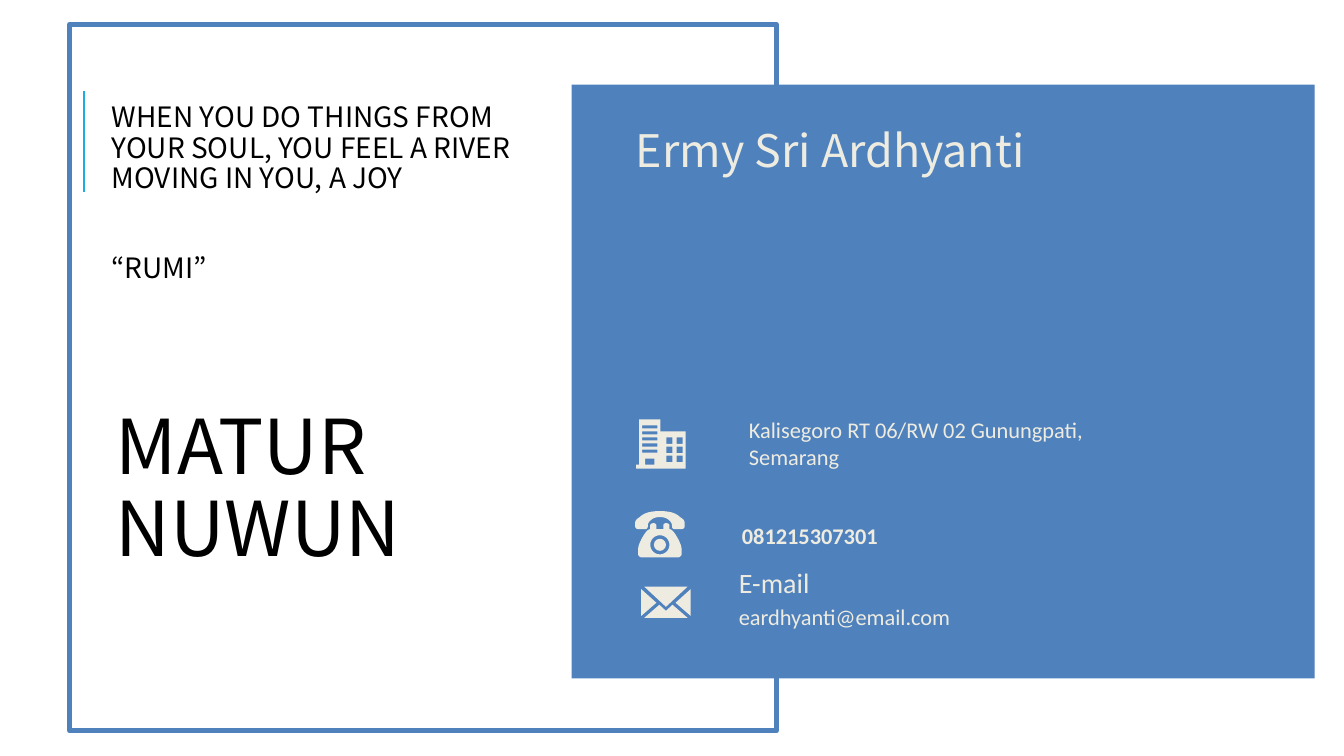
from dataclasses import dataclass

from pptx import Presentation, util as u
from pptx.dml.color import RGBColor
from pptx.enum import shapes, text
from pptx.oxml import ns, xmlchemy

COLORS = {"blue": "4F81BD", "cyan": "1CACE3", "cream": "EEECE1", "black": "000000"}
HEADING_FONT = "Noto Sans CJK KR"
BODY_FONT = "Calibri"
CELL = u.Inches(0.1)
FINE = u.Inches(0.01)


@dataclass
class Box:
    """A rectangle measured in grid cells."""
    left: float
    top: float
    width: float
    height: float

    def inner(self, left, top, width, height):
        """Return a box whose corner is offset from this one."""
        return Box(self.left + left, self.top + top, width, height)

    def emu(self):
        """Return left, top, width and height as slide lengths."""
        return [round(n * CELL) for n in (self.left, self.top, self.width, self.height)]


def color(name):
    """Look up a named colour."""
    return RGBColor.from_string(COLORS[name])


def paint(shape, fill):
    """Give a shape a plain fill without line or shadow."""
    shape.shadow.inherit = False
    shape.fill.solid()
    shape.fill.fore_color.rgb = color(fill)
    shape.line.fill.background()


def write(slide, box, *lines, size=16, font=BODY_FONT, ink="cream", bold=False,
          spacing=None, gap=0):
    """Add a text box with one paragraph per line, separated by gap points."""
    frame = slide.shapes.add_textbox(*box.emu()).text_frame
    frame.word_wrap = True
    frame.vertical_anchor = text.MSO_ANCHOR.TOP
    for index, line in enumerate(lines):
        paragraph = frame.add_paragraph() if index else frame.paragraphs[0]
        paragraph.line_spacing = spacing
        paragraph.space_before = u.Pt(gap if index else 0)
        run = paragraph.add_run()
        run.text = line
        run.font.size = u.Pt(size)
        run.font.name = font
        run.font.bold = bold
        run.font.color.rgb = color(ink)


def outline(slide, box, *contours):
    """Fill contours given in tenths of a cell from the box corner."""
    left, top, _, _ = box.emu()
    placed = [[(round(left + x * FINE), round(top + y * FINE)) for x, y in contour]
              for contour in contours]
    builder = slide.shapes.build_freeform(*placed[0][0], scale=1.0)
    for index, points in enumerate(placed):
        if index:
            builder.move_to(*points[0])
        builder.add_line_segments(points[1:], close=True)
    paint(builder.convert_to_shape(), "cream")


def curve(start, first, second, end, steps=8):
    """Sample a cubic curve."""
    points = []
    for step in range(steps + 1):
        t = step / steps
        weights = ((1 - t) ** 3, 3 * t * (1 - t) ** 2, 3 * t * t * (1 - t), t ** 3)
        points.append(tuple(sum(w * p[axis] for w, p in zip(weights, (start, first, second, end)))
                            for axis in (0, 1)))
    return points


def mirror(half, center):
    """Complete a symmetric contour from its right half."""
    return ([(center + x, y) for x, y in half]
            + [(center - x, y) for x, y in reversed(half)])


def rectangle(left, top, width, height):
    """Return the corners of a rectangle."""
    return [(left, top), (left, top + height),
            (left + width, top + height), (left + width, top)]


def building_icon(slide, box):
    """Draw an office tower with its annex."""
    walls = [(24, 12), (24, 0), (3, 0), (3, 45), (0, 45), (0, 49), (49, 49), (49, 12)]
    door = rectangle(9, 39, 9, 6)
    slats = [rectangle(6, 6 + 6 * row, 15, 3) for row in range(5)]
    windows = [rectangle(30 + 10 * column, 18 + 9 * row, 6, 6.5)
               for column in range(2) for row in range(3)]
    outline(slide, box, walls, door, *slats, *windows)


def phone_icon(slide, box):
    """Draw a desk telephone with a round dial."""
    center, dial_y = 24.5, 33.5
    handset = (curve((0, 0), (12, 0), (17, 3), (20, 6))
               + curve((20, 6), (23, 8), (24.5, 9), (24.5, 12))
               + curve((24.5, 15), (24.5, 17), (23, 18), (21, 18))
               + curve((15, 18), (13, 18), (12, 17), (12, 15))
               + curve((12, 15), (12, 14), (12, 12), (10, 10))
               + curve((10, 10), (8, 8), (6, 6), (0, 6)))
    body = ([(0, 18), (3.5, 18)]
            + curve((3.5, 14), (3.5, 13), (5, 12), (6, 12))
            + curve((6, 12), (8, 12), (9.5, 13), (9.5, 14))
            + curve((9.5, 18), (11, 18), (12, 19), (13, 20))
            + curve((13, 20), (16, 23), (21.5, 33), (21.5, 37))
            + curve((21.5, 43), (21.5, 44), (20, 46), (18, 46))
            + [(0, 46)])
    ring = (curve((0, 24), (5.25, 24), (9.5, 28.25), (9.5, dial_y))
            + curve((9.5, dial_y), (9.5, 38.75), (5.25, 43), (0, 43)))
    outline(slide, box, mirror(handset, center))
    dial = slide.shapes.add_shape(shapes.MSO_SHAPE.OVAL, *box.inner(1.85, 2.75, 1.2, 1.2).emu())
    paint(dial, "cream")
    outline(slide, box, mirror(body, center), mirror(ring, center))


def envelope_icon(slide, box):
    """Draw an envelope as four separate folds."""
    side = [(0, 2.5), (0, 29), (15, 16)]
    folds = ([(3, 0), (46, 0), (24.5, 20)],
             [(49 - x, y) for x, y in side],
             side,
             [(24.5, 24), (18, 18), (3, 31), (46, 31), (31, 18)])
    for fold in folds:
        outline(slide, box, fold)


def frame_region(slide, box):
    """Draw the square outline and the accent rule inside it."""
    rule_left, rule_top, _, rule_height = box.inner(1.4, 6.6, 0, 10).emu()
    rule = slide.shapes.add_connector(shapes.MSO_CONNECTOR.STRAIGHT, rule_left, rule_top,
                                      rule_left, rule_top + rule_height)
    rule.line.color.rgb = color("cyan")
    rule.line.width = u.Pt(1.5)
    rule._element.spPr.append(xmlchemy.OxmlElement("a:effectLst"))
    square = slide.shapes.add_shape(shapes.MSO_SHAPE.RECTANGLE, *box.emu())
    square.shadow.inherit = False
    square.fill.background()
    square.line.color.rgb = color("blue")
    square.line.width = u.Pt(3.5)
    square._element.spPr.find(ns.qn("a:ln")).append(xmlchemy.OxmlElement("a:round"))


def contact_card(slide, box):
    """Fill the blue card with a name and contact rows."""
    card = slide.shapes.add_shape(shapes.MSO_SHAPE.RECTANGLE, *box.emu())
    paint(card, "blue")
    write(slide, box.inner(5.4, 3.9, 66, 26.9), "Ermy Sri Ardhyanti",
          size=32, font=HEADING_FONT, spacing=0.9)
    write(slide, box.inner(16.6, 32.4, 38.5, 6.4), "Kalisegoro RT 06/RW 02 Gunungpati, Semarang")
    write(slide, box.inner(15.9, 42.9, 38.5, 3.7), "081215307301", bold=True)
    write(slide, box.inner(15.6, 50.9, 38.5, 3.7), "eardhyanti@email.com")
    write(slide, box.inner(15.6, 47.2, 37.2, 4.4), "E-mail", size=20)
    phone_icon(slide, box.inner(6.3, 42.3, 4.9, 4.6))
    envelope_icon(slide, box.inner(6.9, 49.8, 4.9, 3.1))
    building_icon(slide, box.inner(6.4, 33.2, 4.9, 4.9))


def closing_words(slide, box):
    """Place the quotation and the thanks."""
    style = {"font": HEADING_FONT, "ink": "black", "spacing": 0.9}
    write(slide, box.inner(3.2, 7.4, 43.4, 26.9),
          "WHEN YOU DO THINGS FROM YOUR SOUL, YOU FEEL A RIVER MOVING IN YOU, A JOY",
          "“RUMI”", size=20, gap=43, **style)
    write(slide, box.inner(3.6, 37.7, 43.4, 26.9), "MATUR NUWUN", size=54, **style)


def main():
    """Build and save the closing slide."""
    presentation = Presentation()
    presentation.slide_width = u.Inches(13.33)
    presentation.slide_height = u.Inches(7.5)
    slide = presentation.slides.add_slide(presentation.slide_layouts[6])
    frame = Box(6.9, 2.4, 70.1, 70.1)
    frame_region(slide, frame)
    contact_card(slide, Box(56.7, 8.4, 73.7, 58.9))
    closing_words(slide, frame)
    presentation.save("out.pptx")


if __name__ == "__main__":
    main()
